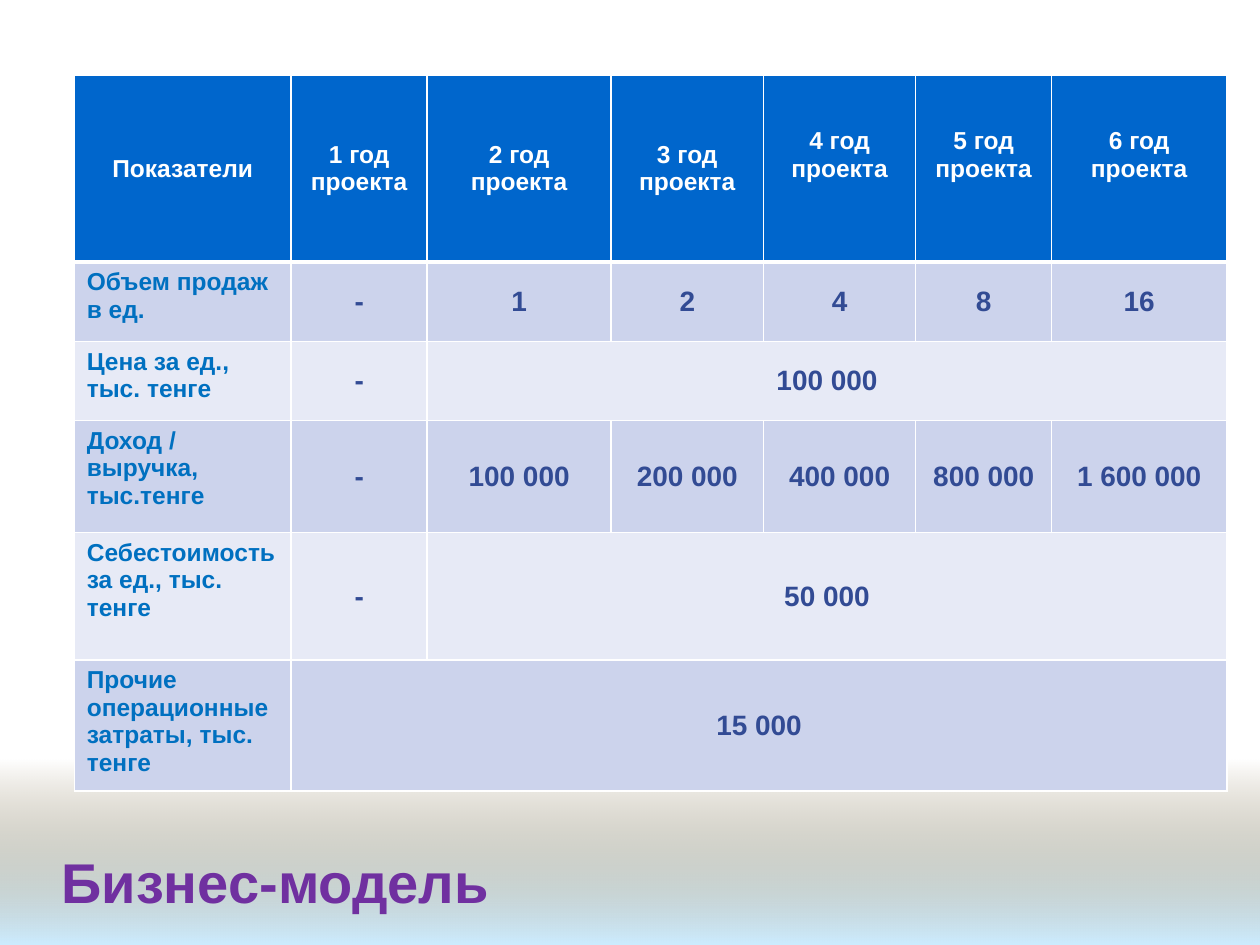
from lxml import etree
from pptx import Presentation
from pptx import util as u
from pptx.dml.color import RGBColor
from pptx.enum import shapes, text
from pptx.oxml import ns

COLORS = {
    "header": "0066CC", "band_dark": "CCD3EC", "band_light": "E7EAF6",
    "white": "FFFFFF", "label": "0070C0", "value": "324B94",
    "title": "7030A0", "earth": "765E2F", "sky": "CCECFF",
}
COLUMN_WIDTHS = [4.37, 2.74, 3.71, 3.07, 3.07, 2.74, 3.53]
ROW_HEIGHTS = [3.76, 1.6, 1.6, 2.26, 2.57, 2.26]

# The last text of a short row spans the remaining columns
ROWS = [
    ["Показатели", "1 год проекта", "2 год проекта", "3 год проекта",
     "4 год\nпроекта", "5 год\nпроекта", "6 год\nпроекта"],
    ["Объем продаж в ед.", "-", "1", "2", "4", "8", "16"],
    ["Цена за ед., тыс. тенге", "-", "100 000"],
    ["Доход / выручка, тыс.тенге", "-", "100 000", "200 000", "400 000",
     "800 000", "1 600 000"],
    ["Себестоимость за ед., тыс. тенге", "-", "50 000"],
    ["Прочие операционные затраты, тыс. тенге", "15 000"],
]


def rgb(name):
    return RGBColor.from_string(COLORS[name])


def write(frame, content, size, color, alignment):
    frame.text = content
    for paragraph in frame.paragraphs:
        paragraph.alignment = alignment
        for name, value in {"name": "Arial", "size": u.Pt(size), "bold": True}.items():
            setattr(paragraph.font, name, value)
        paragraph.font.color.rgb = rgb(color)


def set_borders(cell, widths):
    """Draw white borders; widths are points for left, right, top, bottom."""
    properties = cell._tc.get_or_add_tcPr()
    for index, (side, width) in enumerate(zip("LRTB", widths)):
        line = etree.Element(ns.qn(f"a:ln{side}"), w=str(u.Pt(width)))
        fill = etree.SubElement(line, ns.qn("a:solidFill"))
        etree.SubElement(fill, ns.qn("a:srgbClr"), val=COLORS["white"])
        properties.insert(index, line)


def add_ground(slide, left, top, width, height):
    shape = slide.shapes.add_shape(
        shapes.MSO_SHAPE.RECTANGLE, u.Cm(left), u.Cm(top), u.Cm(width), u.Cm(height))
    shape.shadow.inherit = False
    shape.line.fill.background()
    shape.fill.gradient()
    shape.fill.gradient_angle = 270
    for stop, color in zip(shape.fill.gradient_stops, ("earth", "sky")):
        stop.color.rgb = rgb(color)
    # The upper stop is fully transparent
    first_color = shape._element.find(".//" + ns.qn("a:srgbClr"))
    etree.SubElement(first_color, ns.qn("a:alpha"), val="0")


def add_title(slide, left, top, width, height):
    box = slide.shapes.add_textbox(u.Cm(left), u.Cm(top), u.Cm(width), u.Cm(height))
    frame = box.text_frame
    frame.word_wrap = True
    frame.vertical_anchor = text.MSO_ANCHOR.MIDDLE
    write(frame, "Бизнес-модель", 32, "title", text.PP_ALIGN.LEFT)


def format_cell(cell, row, column):
    header = row == 0
    label = column == 0 and not header
    fill = "header" if header else ("band_dark" if row % 2 else "band_light")
    cell.fill.solid()
    cell.fill.fore_color.rgb = rgb(fill)
    set_borders(cell, (1, 1, 3 if row == 1 else 1, 3 if header else 1))
    anchor = text.MSO_ANCHOR.TOP if label else text.MSO_ANCHOR.MIDDLE
    # The last three headers sit half a line higher
    bottom = 0.68 if header and column > 3 else 0.13
    for name, value in {
        "vertical_anchor": anchor,
        "margin_left": u.Cm(0.25), "margin_right": u.Cm(0.25),
        "margin_top": u.Cm(0.13), "margin_bottom": u.Cm(bottom),
    }.items():
        setattr(cell, name, value)


def add_indicators(slide, left, top):
    table = slide.shapes.add_table(
        len(ROWS), len(COLUMN_WIDTHS), u.Cm(left), u.Cm(top),
        u.Cm(sum(COLUMN_WIDTHS)), u.Cm(sum(ROW_HEIGHTS))).table
    for column, width in zip(table.columns, COLUMN_WIDTHS):
        column.width = u.Cm(width)
    for row, height in zip(table.rows, ROW_HEIGHTS):
        row.height = u.Cm(height)

    last = len(COLUMN_WIDTHS) - 1
    for row, contents in enumerate(ROWS):
        for column in range(last + 1):
            format_cell(table.cell(row, column), row, column)
        for column, content in enumerate(contents):
            if row == 0:
                style = (14, "white", text.PP_ALIGN.CENTER)
            elif column == 0:
                style = (14, "label", text.PP_ALIGN.LEFT)
            else:
                style = (16, "value", text.PP_ALIGN.CENTER)
            write(table.cell(row, column).text_frame, content, *style)
        if len(contents) <= last:
            table.cell(row, len(contents) - 1).merge(table.cell(row, last))


def main():
    presentation = Presentation()
    presentation.slide_width = u.Cm(25.4)
    presentation.slide_height = u.Cm(19.05)
    slide = presentation.slides.add_slide(presentation.slide_layouts[6])
    add_ground(slide, 0, 15.32, 25.4, 3.73)
    add_title(slide, 0.99, 16.87, 17.48, 1.78)
    add_indicators(slide, 1.5, 1.52)
    presentation.save("out.pptx")


if __name__ == "__main__":
    main()
